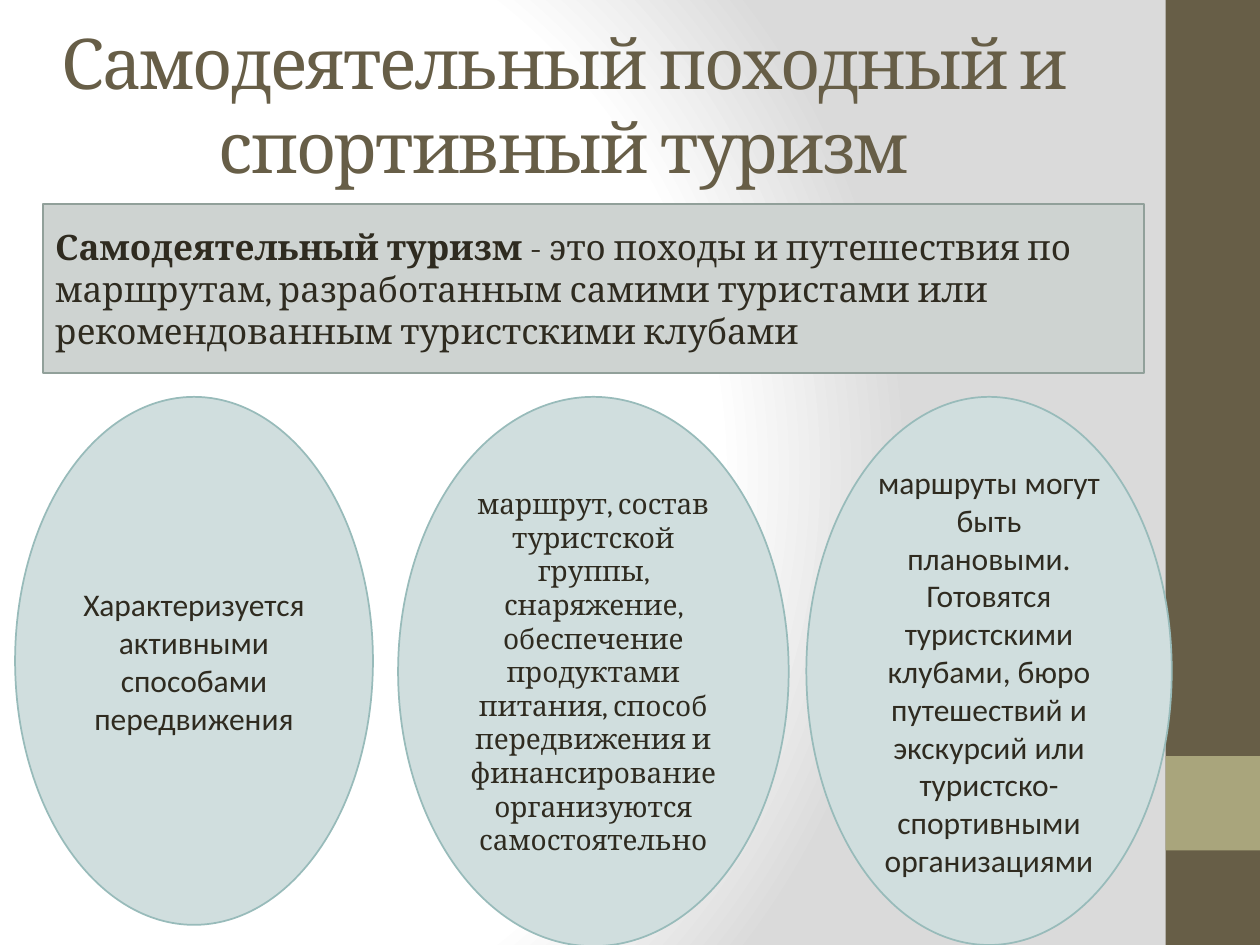
from lxml import etree
from pptx import Presentation
from pptx.dml.color import RGBColor
from pptx.enum.shapes import MSO_SHAPE
from pptx.enum.text import MSO_ANCHOR, PP_ALIGN
from pptx.oxml import parse_xml
from pptx.oxml.ns import nsdecls, qn
from pptx.util import Inches, Pt

RECTANGLE, OVAL = MSO_SHAPE.RECTANGLE, MSO_SHAPE.OVAL
MIDDLE = MSO_ANCHOR.MIDDLE
LEFT, CENTER = PP_ALIGN.LEFT, PP_ALIGN.CENTER

BROWN, OLIVE, INK = "675E47", "A9A57C", "2F2B20"
BACKGROUND_STOPS = [(0, "FFFFFF"), (75, "FFFFFF"), (100, "DADADA")]
TITLE = "Самодеятельный походный и спортивный туризм"
DEFINITION = [
    ("Самодеятельный туризм ", True),
    ("- это походы и путешествия по маршрутам, разработанным самими туристами "
     "или рекомендованным туристскими клубами", False),
]
FEATURES = [
    (0.12, 2.84, 4.19, "Calibri", 18,
     "Характеризуется активными способами передвижения"),
    (3.16, 3.1, 4.36, "Cambria", 16,
     "маршрут, состав туристской группы, снаряжение, обеспечение продуктами "
     "питания, способ передвижения и финансирование организуются самостоятельно"),
    (6.4, 2.9, 4.35, "Calibri", 18,
     "маршруты могут быть плановыми. Готовятся туристскими клубами, бюро "
     "путешествий и экскурсий или туристско-спортивными организациями"),
]


def color(value):
    """Turn a hex string into a colour."""
    return RGBColor.from_string(value)


def add_figure(page, kind, box, fill, line=None):
    """Add a flat shape with an optional thin outline."""
    figure = page.shapes.add_shape(kind, *map(Inches, box))
    figure.shadow.inherit = False
    figure.fill.solid()
    figure.fill.fore_color.rgb = color(fill)
    if line:
        figure.line.color.rgb = color(line)
        figure.line.width = Pt(1)
    else:
        figure.line.fill.background()
    return figure


def write(figure, parts, font_name, size, ink, align):
    """Write one paragraph of (text, bold) parts, centred vertically."""
    frame = figure.text_frame
    frame.word_wrap = True
    frame.vertical_anchor = MIDDLE
    para = frame.paragraphs[0]
    para.alignment = align
    for text, bold in parts:
        span = para.add_run()
        span.text = text
        span.font.name = font_name
        span.font.size = Pt(size)
        span.font.bold = bold
        span.font.color.rgb = color(ink)
    return para


def paint_background(page):
    """Give the page a radial gradient."""
    page.background.fill.solid()
    solid = next(page.element.iter(qn("a:solidFill")))
    gradient = parse_xml(
        f'<a:gradFill {nsdecls("a")} rotWithShape="1"><a:gsLst/><a:path path="circle">'
        '<a:fillToRect l="20000" t="50000" r="100000" b="50000"/></a:path></a:gradFill>')
    for position, value in BACKGROUND_STOPS:
        stop = etree.SubElement(gradient[0], qn("a:gs"), pos=str(position * 1000))
        etree.SubElement(stop, qn("a:srgbClr"), val=value)
    solid.getparent().replace(solid, gradient)


def add_side_band(page, left, top, width, height):
    """Add the vertical band with its square accent."""
    add_figure(page, RECTANGLE, (left, top, width, height), BROWN)
    add_figure(page, RECTANGLE, (left, top + height - 2 * width, width, width), OLIVE)


def add_title(page, box):
    """Add the tightly spaced heading."""
    heading = page.shapes.add_textbox(*map(Inches, box))
    para = write(heading, [(TITLE, False)], "Cambria", 40, BROWN, CENTER)
    para.runs[0].font._element.set("spc", "-100")


def add_definition(page, box):
    """Add the framed definition."""
    panel = add_figure(page, RECTANGLE, box, "CED3D1", "91A09A")
    write(panel, DEFINITION, "Cambria", 20, INK, LEFT)


def add_features(page, top):
    """Add the row of ovals describing this kind of tourism."""
    for left, width, height, font_name, size, text in FEATURES:
        oval = add_figure(page, OVAL, (left, top, width, height), "D0DEDE", "98BBBA")
        write(oval, [(text, False)], font_name, size, INK, CENTER)


def main():
    """Build and save the deck."""
    deck = Presentation()
    deck.slide_width, deck.slide_height = Inches(10), Inches(7.5)
    page = deck.slides.add_slide(deck.slide_layouts[6])
    paint_background(page)
    add_side_band(page, 9.25, 0, 0.75, 7.5)
    add_title(page, (0.31, 0.21, 8.33, 1.23))
    add_definition(page, (0.34, 1.62, 8.74, 1.34))
    add_features(page, 3.15)
    deck.save("out.pptx")


if __name__ == "__main__":
    main()
